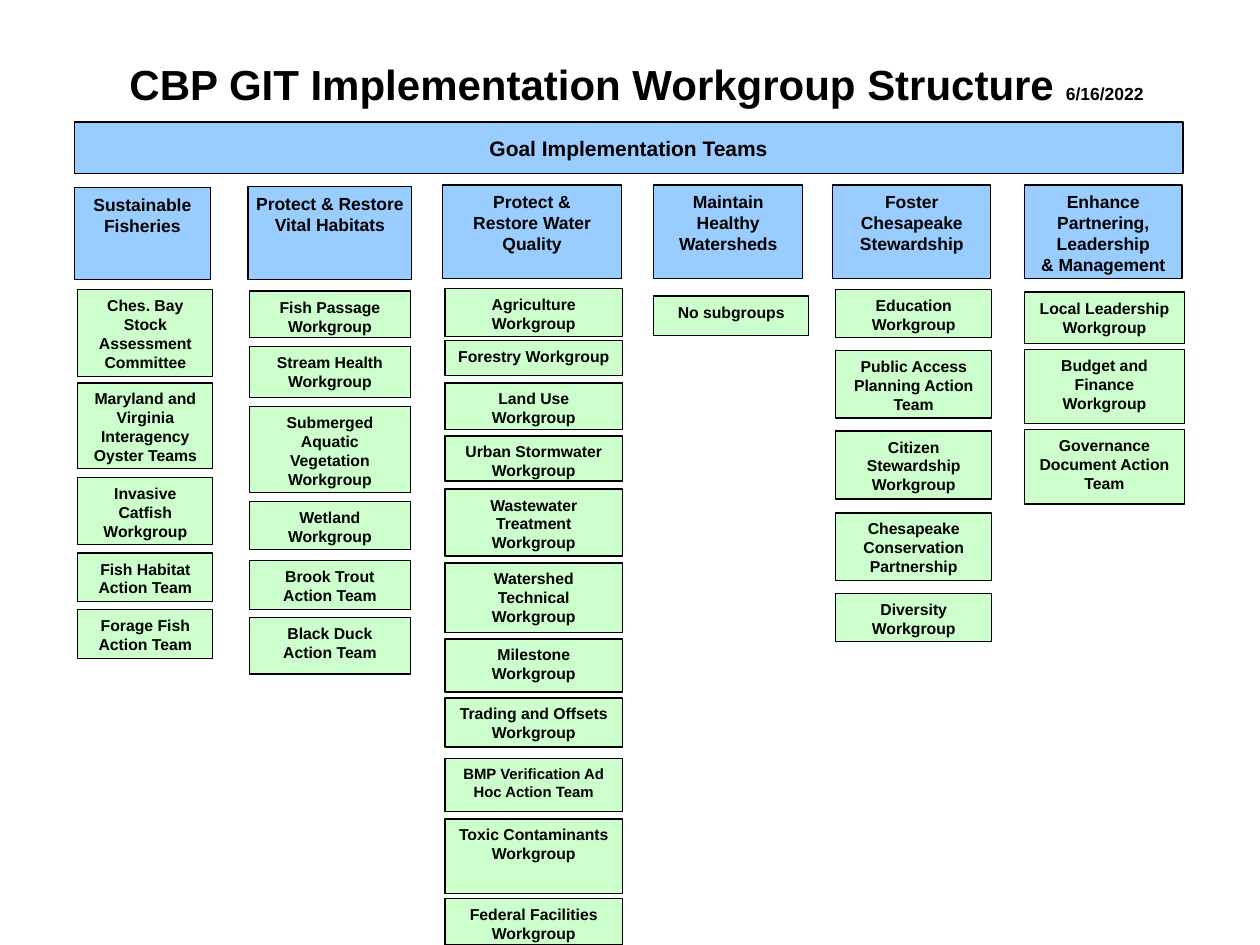
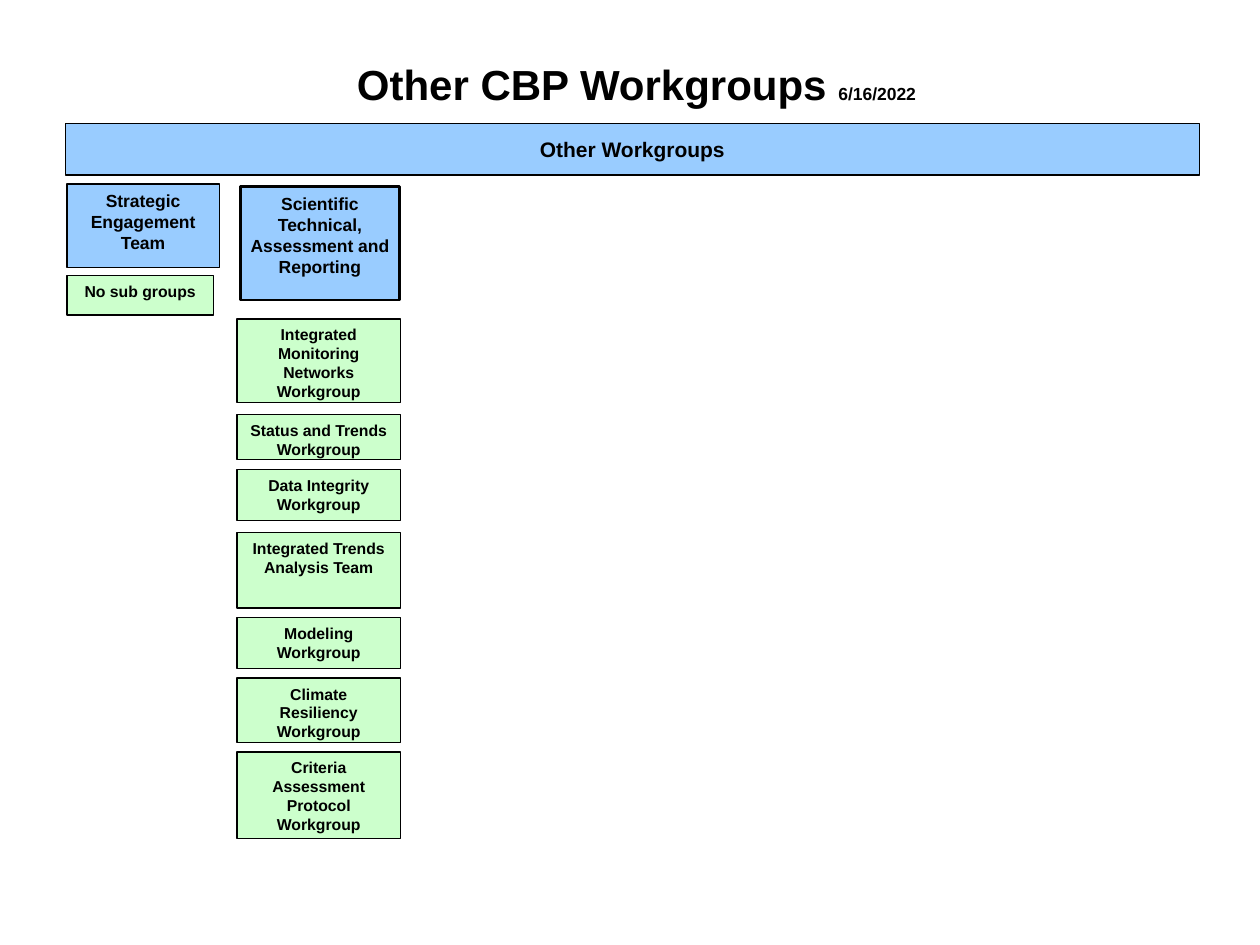
import pptx
import pptx.util
import pptx.dml.color
import pptx.enum.shapes
import pptx.enum.text
from pptx.util import Cm, Pt

COLORS = {"text": "000000", "line": "000000", "team": "99CCFF", "group": "CCFFCC"}
FONT = "Arial"
DATE = "6/16/2022"
SHAPES = pptx.enum.shapes.MSO_SHAPE
ANCHORS = pptx.enum.text.MSO_ANCHOR
ALIGN_CENTER = pptx.enum.text.PP_ALIGN.CENTER

# Lengths are in centimetres. A column holds a team (box, lines of its name),
# the left and width of its workgroups, and (top, height, name) of each one.
GIT_COLUMNS = [
    {"team": (1.5, 3.78, 2.74, 1.85), "name": "Sustainable\nFisheries",
     "left": 1.57, "width": 2.72, "groups": [
         (5.84, 1.75, "Ches. Bay\nStock Assessment Committee"),
         (7.72, 1.73, "Maryland and Virginia Interagency Oyster Teams"),
         (9.63, 1.35, "Invasive Catfish Workgroup"),
         (11.15, 0.97, "Fish Habitat Action Team"),
         (12.29, 0.99, "Forage Fish Action Team")]},
    {"team": (5, 3.76, 3.3, 1.88), "name": "Protect & Restore\nVital Habitats",
     "left": 5.03, "width": 3.24, "groups": [
         (5.87, 0.94, "Fish Passage Workgroup"),
         (6.99, 1.02, "Stream Health Workgroup"),
         (8.2, 1.73, "Submerged Aquatic Vegetation Workgroup"),
         (10.11, 0.97, "Wetland Workgroup"),
         (11.3, 0.99, "Brook Trout Action Team"),
         (12.45, 1.14, "Black Duck Action Team")]},
    {"team": (8.92, 3.73, 3.61, 1.88), "name": "Protect &\nRestore Water\nQuality",
     "left": 8.97, "width": 3.58, "groups": [
         (5.82, 0.97, "Agriculture Workgroup"),
         (6.86, 0.71, "Forestry Workgroup"),
         (7.72, 0.94, "Land Use Workgroup"),
         (8.79, 0.91, "Urban Stormwater Workgroup"),
         (9.86, 1.35, "Wastewater Treatment Workgroup"),
         (11.35, 1.4, "Watershed Technical Workgroup"),
         (12.88, 1.07, "Milestone Workgroup"),
         (14.07, 0.99, "Trading and Offsets Workgroup"),
         (15.29, 1.07, "BMP Verification Ad Hoc Action Team", 8.5),
         (16.51, 1.5, "Toxic Contaminants Workgroup"),
         (18.11, 0.94, "Federal Facilities Workgroup")]},
    {"team": (13.18, 3.73, 3, 1.88), "name": "Maintain\nHealthy\nWatersheds",
     "left": 13.18, "width": 3.12, "groups": [(5.97, 0.79, "No subgroups")]},
    {"team": (16.79, 3.73, 3.18, 1.88), "name": "Foster\nChesapeake\nStewardship",
     "left": 16.85, "width": 3.14, "groups": [
         (5.84, 0.97, "Education Workgroup"),
         (7.06, 1.37, "Public Access Planning Action Team"),
         (8.69, 1.37, "Citizen Stewardship Workgroup"),
         (10.34, 1.37, "Chesapeake Conservation Partnership"),
         (11.96, 0.97, "Diversity Workgroup")]},
    {"team": (20.65, 3.73, 3.18, 1.88),
     "name": "Enhance\nPartnering,\nLeadership\n& Management",
     "left": 20.65, "width": 3.23, "groups": [
         (5.89, 1.04, "Local Leadership Workgroup"),
         (7.04, 1.5, "Budget and Finance Workgroup"),
         (8.66, 1.5, "Governance Document Action Team")]},
]

OTHER_COLUMNS = [
    {"team": (1.35, 3.71, 3.07, 1.68), "name": "Strategic\nEngagement\nTeam",
     "left": 1.35, "width": 2.95, "groups": [(5.56, 0.79, "No sub groups")]},
    {"team": (4.85, 3.76, 3.2, 2.29), "line_width": 1.5,
     "name": "Scientific\nTechnical,\nAssessment and\nReporting",
     "left": 4.78, "width": 3.29, "groups": [
         (6.43, 1.68, "Integrated Monitoring Networks Workgroup"),
         (8.36, 0.91, "Status and Trends\nWorkgroup"),
         (9.47, 1.02, "Data Integrity Workgroup"),
         (10.74, 1.52, "Integrated Trends Analysis Team"),
         (12.45, 1.02, "Modeling Workgroup"),
         (13.67, 1.3, "Climate Resiliency Workgroup"),
         (15.16, 1.75, "Criteria Assessment Protocol Workgroup")]},
]


def color(name):
    return pptx.dml.color.RGBColor.from_string(COLORS[name])


def set_attributes(target, values):
    for name, value in values.items():
        setattr(target, name, value)


class WorkgroupDeck:
    """Holds the shared style and the slide being built."""

    def __init__(self):
        self.presentation = pptx.Presentation()
        set_attributes(self.presentation,
                       {"slide_width": Cm(25.4), "slide_height": Cm(19.05)})
        self.slide = None

    def add_run(self, paragraph, text, size):
        paragraph.alignment = ALIGN_CENTER
        run = paragraph.add_run()
        run.text = text
        set_attributes(run.font, {"name": FONT, "size": Pt(size), "bold": True})
        run.font.color.rgb = color("text")

    def add_slide(self, title):
        layout = self.presentation.slide_layouts.get_by_name("Title Only")
        self.slide = self.presentation.slides.add_slide(layout)
        shape = self.slide.shapes.title
        set_attributes(shape, {"left": Cm(1.4), "top": Cm(0.56),
                               "width": Cm(22.86), "height": Cm(2.24)})
        set_attributes(shape.text_frame, {
            "vertical_anchor": ANCHORS.MIDDLE, "word_wrap": True,
            "auto_size": pptx.enum.text.MSO_AUTO_SIZE.NONE})
        paragraph = shape.text_frame.paragraphs[0]
        self.add_run(paragraph, title + " ", 24)
        self.add_run(paragraph, DATE, 10)

    def add_box(self, box, text, fill, size, kind=SHAPES.FLOWCHART_PROCESS,
                anchor=ANCHORS.TOP, wrap=True, line_width=0.75):
        shape = self.slide.shapes.add_shape(kind, *map(Cm, box))
        shape.shadow.inherit = False
        shape.fill.solid()
        shape.fill.fore_color.rgb = color(fill)
        shape.line.color.rgb = color("line")
        shape.line.width = Pt(line_width)
        frame = shape.text_frame
        set_attributes(frame, {"vertical_anchor": anchor, "word_wrap": wrap})
        for index, line in enumerate(text.split("\n")):
            paragraph = frame.add_paragraph() if index else frame.paragraphs[0]
            self.add_run(paragraph, line, size)

    def add_banner(self, box, text):
        self.add_box(box, text, "team", 12, anchor=ANCHORS.MIDDLE, wrap=False)

    def add_column(self, column):
        self.add_box(column["team"], column["name"], "team", 10,
                     kind=SHAPES.RECTANGLE, wrap=False,
                     line_width=column.get("line_width", 0.75))
        for top, height, name, *size in column["groups"]:
            box = (column["left"], top, column["width"], height)
            self.add_box(box, name, "group", size[0] if size else 9)

    def add_structure(self, title, banner_box, banner_text, columns):
        self.add_slide(title)
        self.add_banner(banner_box, banner_text)
        for column in columns:
            self.add_column(column)


def main():
    deck = WorkgroupDeck()
    # Goal implementation teams
    deck.add_structure("CBP GIT Implementation Workgroup Structure",
                       (1.5, 2.46, 22.35, 1.04), "Goal Implementation Teams",
                       GIT_COLUMNS)
    # Other workgroups
    deck.add_structure("Other CBP Workgroups", (1.32, 2.49, 22.86, 1.04),
                       "Other Workgroups", OTHER_COLUMNS)
    deck.presentation.save("out.pptx")


if __name__ == "__main__":
    main()
